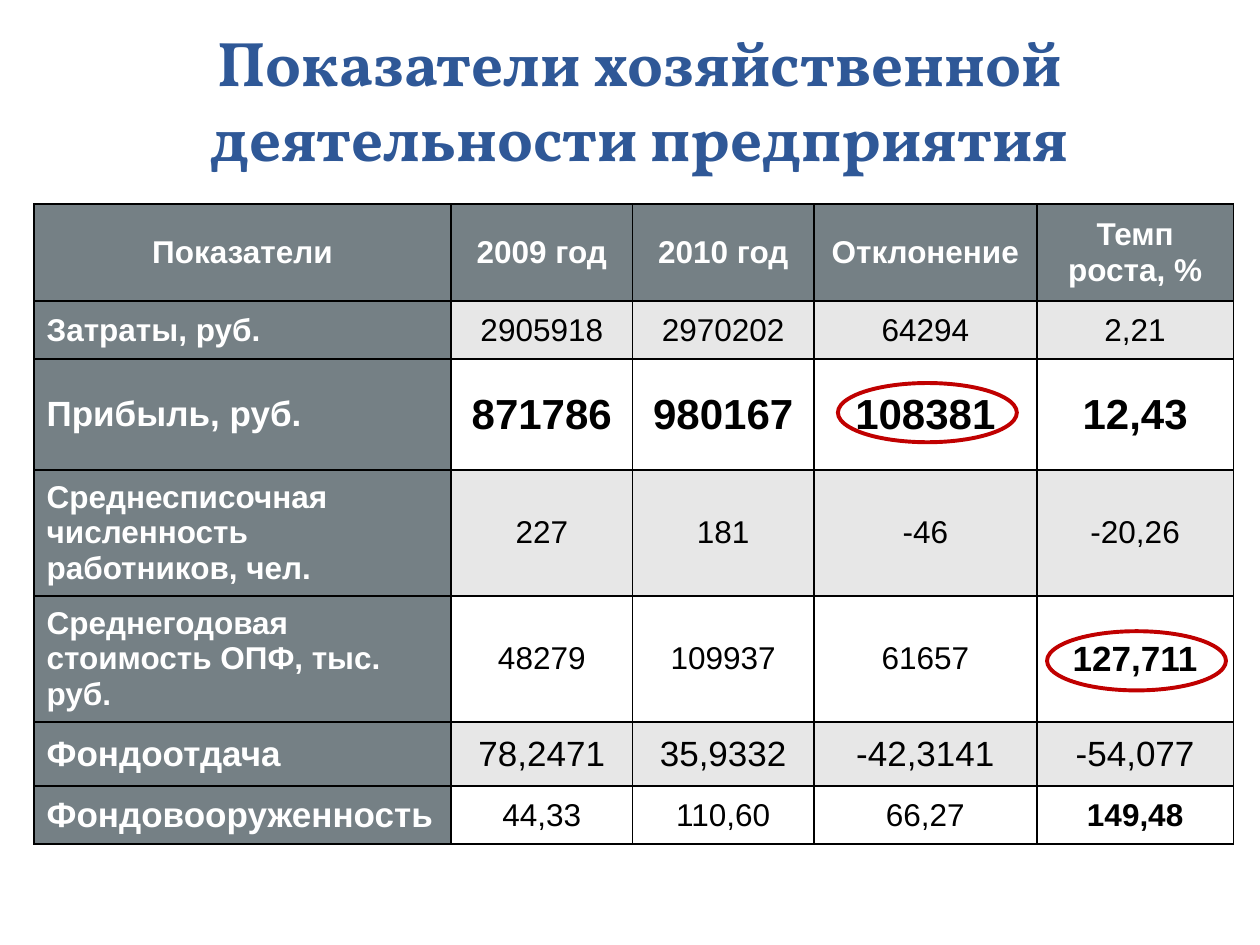
from typing import NamedTuple

from lxml import etree
from pptx import Presentation
from pptx import util as u
from pptx.dml.color import RGBColor
from pptx.enum import shapes, text
from pptx.oxml import ns

HUES = {"title": "2F5897", "head": "758085", "band": "E7E7E7",
        "white": "FFFFFF", "black": "000000", "ring": "C00000"}
COLS = [3.31, 1.44, 1.44, 1.77, 1.56]


class Row(NamedTuple):
    cells: list[str]
    high: float
    label: int = 18      # size of the first cell
    size: int = 18       # size of the values
    bold: bool = False   # weight of the values


class Ring(NamedTuple):
    left: float
    top: float


ROWS = [
    Row(["Показатели", "2009 год", "2010 год", "Отклонение", "Темп роста, %"],
        0.77, bold=True),
    Row(["Затраты, руб.", "2905918", "2970202", "64294", "2,21"], 0.46),
    Row(["Прибыль, руб.", "871786", "980167", "108381", "12,43"],
        0.88, 20, 24, True),
    Row(["Среднесписочная численность работников, чел.",
         "227", "181", "-46", "-20,26"], 1),
    Row(["Среднегодовая стоимость ОПФ, тыс. руб.",
         "48279", "109937", "61657", "127,711"], 1),
    Row(["Фондоотдача", "78,2471", "35,9332", "-42,3141", "-54,077"],
        0.51, 20, 20),
    Row(["Фондовооруженность", "44,33", "110,60", "66,27", "149,48"],
        0.46, 20),
]
# Single values set apart: (row, column) -> size
STRONG = {(4, 4): 20, (6, 4): 18}
RINGS = [Ring(6.65, 3.04), Ring(8.31, 5.01)]


def tint(name: str) -> RGBColor:
    return RGBColor.from_string(HUES[name])


def write(frame, words: str, *, size: int, hue: str, font: str = "Arial",
          bold: bool = False, center: bool = True) -> None:
    frame.word_wrap = True
    para = frame.paragraphs[0]
    para.alignment = text.PP_ALIGN.CENTER if center else text.PP_ALIGN.LEFT
    run = para.add_run()
    run.text = words
    run.font.name, run.font.size, run.font.bold = font, u.Pt(size), bold
    run.font.color.rgb = tint(hue)


def edge(cell) -> None:
    """Give a cell a thin black line on all four sides."""
    props = cell._tc.get_or_add_tcPr()
    for side in ("lnL", "lnR", "lnT", "lnB"):
        line = etree.SubElement(props, ns.qn(f"a:{side}"), w=str(u.Pt(1)))
        fill = etree.SubElement(line, ns.qn("a:solidFill"))
        etree.SubElement(fill, ns.qn("a:srgbClr"), val=HUES["black"])


def draw_cell(cell, row: Row, r: int, c: int) -> None:
    head = r == 0 or c == 0
    size = row.label if c == 0 else STRONG.get((r, c), row.size)
    write(cell.text_frame, row.cells[c], size=size,
          hue="white" if head else "black",
          bold=head or row.bold or (r, c) in STRONG,
          center=r == 0 or c > 0)
    cell.vertical_anchor = text.MSO_ANCHOR.MIDDLE
    edge(cell)
    cell.fill.solid()
    cell.fill.fore_color.rgb = tint(
        "head" if head else "band" if r % 2 else "white")


def draw_table(slide) -> None:
    table = slide.shapes.add_table(
        len(ROWS), len(COLS), u.Inches(0.27), u.Inches(1.62),
        u.Inches(sum(COLS)), u.Inches(sum(row.high for row in ROWS))).table
    for col, wide in zip(table.columns, COLS):
        col.width = u.Inches(wide)
    for r, row in enumerate(ROWS):
        table.rows[r].height = u.Inches(row.high)
        for c in range(len(COLS)):
            draw_cell(table.cell(r, c), row, r, c)


def draw_title(slide) -> None:
    box = slide.shapes.add_textbox(
        u.Inches(0.27), u.Inches(0.13), u.Inches(9.61), u.Inches(1.31))
    box.text_frame.vertical_anchor = text.MSO_ANCHOR.MIDDLE
    write(box.text_frame, "Показатели хозяйственной деятельности предприятия",
          size=36, hue="title", font="Vollkorn", bold=True)


def draw_ring(slide, ring: Ring) -> None:
    oval = slide.shapes.add_shape(
        shapes.MSO_SHAPE.OVAL, u.Inches(ring.left), u.Inches(ring.top),
        u.Inches(1.42), u.Inches(0.47))
    oval.shadow.inherit = False
    oval.fill.background()
    oval.line.color.rgb = tint("ring")
    oval.line.width = u.Pt(2.25)


def main() -> None:
    deck = Presentation()
    deck.slide_width, deck.slide_height = u.Inches(10), u.Inches(7.5)
    slide = deck.slides.add_slide(deck.slide_layouts[6])
    draw_table(slide)
    draw_title(slide)
    # Rings around the key values
    for ring in RINGS:
        draw_ring(slide, ring)
    deck.save("out.pptx")


if __name__ == "__main__":
    main()
